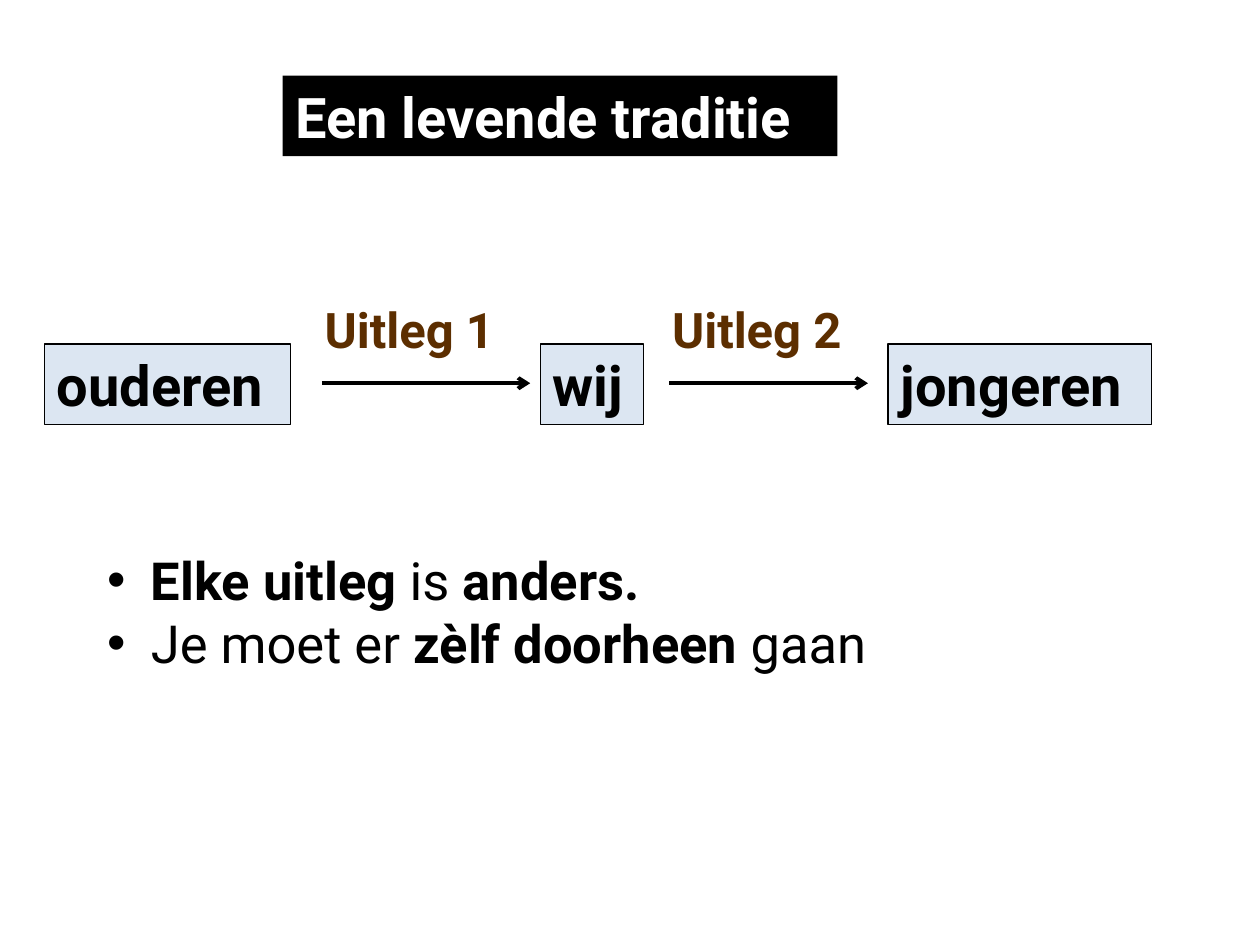
import pptx
import pptx.util
import pptx.dml.color
import pptx.enum.shapes
import pptx.enum.text
import pptx.oxml.ns
from lxml import etree

Pt = pptx.util.Pt
RGB = pptx.dml.color.RGBColor
ALIGN = pptx.enum.text.PP_ALIGN
qn = pptx.oxml.ns.qn

BLACK = RGB(0x00, 0x00, 0x00)
WHITE = RGB(0xFF, 0xFF, 0xFF)
PALE_BLUE = RGB(0xDC, 0xE6, 0xF2)
BROWN = RGB(0x5C, 0x2E, 0x00)


def add_run(p, text, size=32, color=BLACK, bold=True, font="Roboto"):
    r = p.add_run()
    r.text = text
    r.font.name = font
    r.font.size = Pt(size)
    r.font.bold = bold
    r.font.color.rgb = color


class Slide:
    box_top = 196.5
    box_height = 46
    arrow_y = 219
    label_top = 167.75
    bullet_indent = 25

    def __init__(self, prs):
        self.s = prs.slides.add_slide(prs.slide_layouts[1])

    def frame(self, sp):
        tf = sp.text_frame
        tf.word_wrap = True
        tf.auto_size = pptx.enum.text.MSO_AUTO_SIZE.NONE
        tf.vertical_anchor = pptx.enum.text.MSO_ANCHOR.TOP
        tf.paragraphs[0].alignment = ALIGN.LEFT
        return tf

    def place(self, sp, left, top, width, height):
        sp.left, sp.top, sp.width, sp.height = map(Pt, (left, top, width, height))

    def title(self, text, left, top, width):
        sp = self.s.shapes.title
        self.place(sp, left, top, width, self.box_height)
        sp.fill.solid()
        sp.fill.fore_color.rgb = BLACK
        add_run(self.frame(sp).paragraphs[0], text, color=WHITE)

    def box(self, text, left, width):
        sp = self.s.shapes.add_shape(
            pptx.enum.shapes.MSO_SHAPE.RECTANGLE,
            Pt(left), Pt(self.box_top), Pt(width), Pt(self.box_height))
        sp.shadow.inherit = False
        sp.fill.solid()
        sp.fill.fore_color.rgb = PALE_BLUE
        sp.line.color.rgb = BLACK
        sp.line.width = Pt(0.75)
        add_run(self.frame(sp).paragraphs[0], text)

    def arrow(self, start, end):
        c = self.s.shapes.add_connector(
            pptx.enum.shapes.MSO_CONNECTOR.STRAIGHT,
            Pt(start), Pt(self.arrow_y), Pt(end), Pt(self.arrow_y))
        c.line.color.rgb = BLACK
        c.line.width = Pt(2.25)
        etree.SubElement(c.line._get_or_add_ln(), qn("a:tailEnd"), type="arrow")
        etree.SubElement(c._element.spPr, qn("a:effectLst"))

    def label(self, text, left):
        sp = self.s.shapes.add_textbox(
            Pt(left), Pt(self.label_top), Pt(124.5), Pt(41))
        add_run(self.frame(sp).paragraphs[0], text, size=28, color=BROWN)

    def bullets(self, items, left, top, width, height):
        sp = self.s.placeholders[1]
        self.place(sp, left, top, width, height)
        tf = self.frame(sp)
        for i, parts in enumerate(items):
            p = tf.add_paragraph() if i else tf.paragraphs[0]
            p.alignment = ALIGN.JUSTIFY
            p.space_before = Pt(0)
            pPr = p._p.get_or_add_pPr()
            pPr.set("marL", str(Pt(self.bullet_indent)))
            pPr.set("indent", str(-Pt(self.bullet_indent)))
            etree.SubElement(pPr, qn("a:buChar"), char="•")
            for text, bold in parts:
                add_run(p, text, size=30, bold=bold)


def main():
    prs = pptx.Presentation()
    prs.slide_width, prs.slide_height = Pt(720), Pt(540)
    slide = Slide(prs)
    slide.title("Een levende traditie", 161.5, 43.25, 317)
    for text, left, width in (("ouderen", 25.25, 141),
                              ("wij", 308.75, 59),
                              ("jongeren", 507.5, 150.5)):
        slide.box(text, left, width)
    for start, end in ((184, 303), (382.5, 496)):
        slide.arrow(start, end)
    for text, left in (("Uitleg 1", 178.5), ("Uitleg 2", 377)):
        slide.label(text, left)
    slide.bullets([
        [("Elke uitleg ", True), ("is", False), (" anders.", True)],
        [("Je moet er ", False), ("zèlf doorheen ", True), ("gaan", False)],
    ], 54, 309.5, 493, 80)
    prs.save("out.pptx")


if __name__ == "__main__":
    main()
